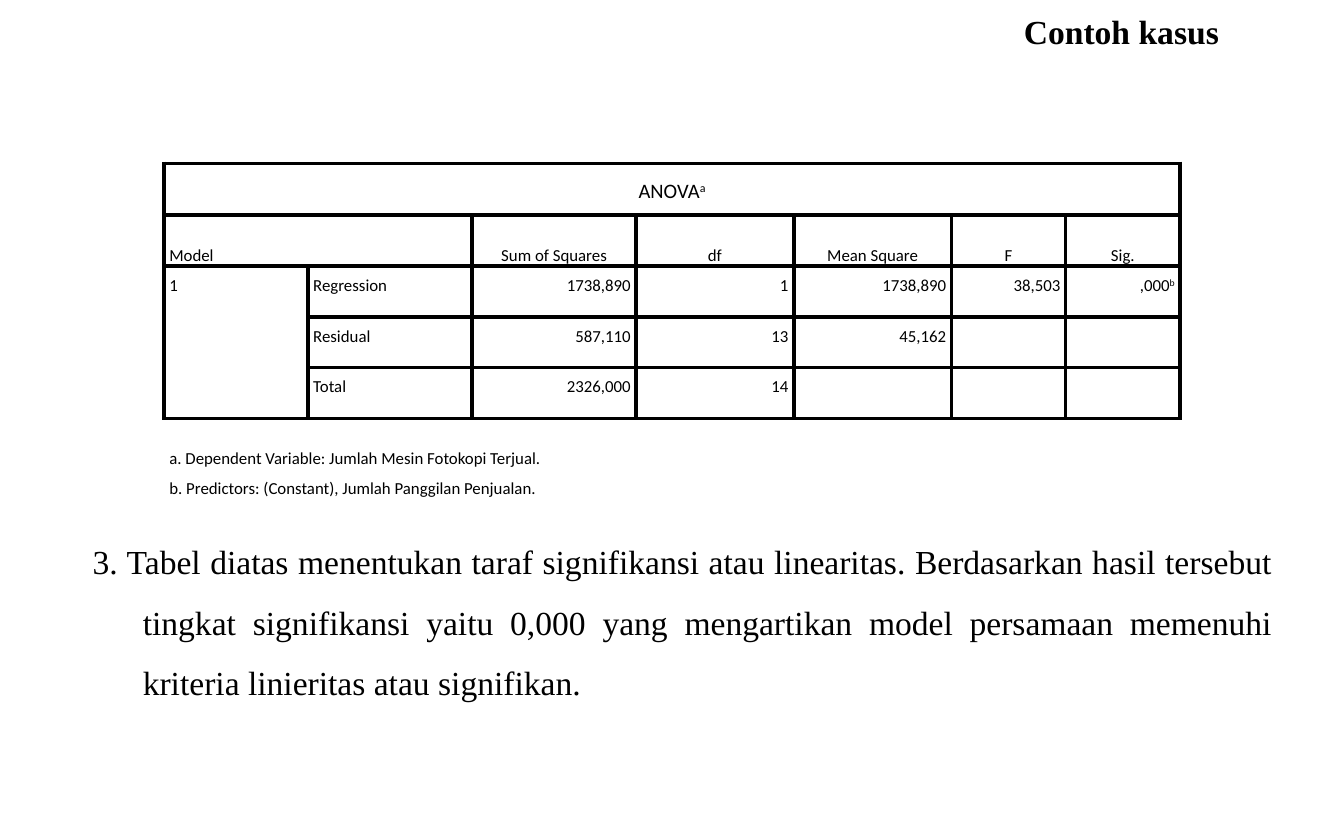
from lxml.etree import SubElement
from pptx import Presentation
from pptx.dml.color import RGBColor
from pptx.enum.text import MSO_ANCHOR, MSO_AUTO_SIZE, PP_ALIGN
from pptx.oxml import parse_xml
from pptx.oxml.ns import nsdecls, qn
from pptx.util import Cm, Pt

INK = "000000"
SERIF = {"name": "Times New Roman", "size": Pt(18)}
SMALL = {"name": "Calibri", "size": Pt(9)}
LARGE = {"name": "Calibri", "size": Pt(11)}
LEFT, MID, RIGHT, FULL = PP_ALIGN.LEFT, PP_ALIGN.CENTER, PP_ALIGN.RIGHT, PP_ALIGN.JUSTIFY
DENSE = {"line_spacing": Pt(16), "space_after": Pt(8)}


def color(code):
    return RGBColor.from_string(code)


def apply(target, form):
    for key, value in form.items():
        setattr(target, key, value)


class Deck:
    def __init__(self, wide, high):
        self.file = Presentation()
        apply(self.file, {"slide_width": Cm(wide), "slide_height": Cm(high)})
        self.slide = self.file.slides.add_slide(self.file.slide_layouts[6])

    def fill_para(self, para, text, font, form, indent):
        apply(para, form)
        for key, value in indent.items():
            para._p.get_or_add_pPr().set(key, str(int(Cm(value))))
        for i, part in enumerate(text.split("|")):
            run = para.add_run()
            run.text = part
            apply(run.font, font)
            run.font.color.rgb = color(INK)
            if i:
                run.font._rPr.set("baseline", "30000")

    def text(self, place, text, font, form, indent):
        frame = self.slide.shapes.add_textbox(*map(Cm, place)).text_frame
        apply(frame, {"word_wrap": True, "auto_size": MSO_AUTO_SIZE.SHAPE_TO_FIT_TEXT})
        self.fill_para(frame.paragraphs[0], text, font, form, indent)

    def border(self, cell, width):
        props = cell._tc.get_or_add_tcPr()
        for side in ("lnL", "lnR", "lnT", "lnB"):
            line = parse_xml(f'<a:{side} {nsdecls("a")} w="{int(Pt(width))}"/>')
            fill = SubElement(line, qn("a:solidFill"))
            SubElement(fill, qn("a:srgbClr")).set("val", INK)
            props.append(line)

    def table(self, left, top, cols, rows, data, style, spans=(), width=0):
        grid = self.slide.shapes.add_table(
            len(rows), len(cols), Cm(left), Cm(top), Cm(sum(cols)), Cm(sum(rows))
        ).table
        apply(grid, {"first_row": False, "horz_banding": False})
        for col, size in zip(grid.columns, cols):
            col.width = Cm(size)
        for row, size in zip(grid.rows, rows):
            row.height = Cm(size)
        for r, line in enumerate(data):
            for c, text in enumerate(line):
                cell = grid.cell(r, c)
                font, align, anchor = style(r, c)
                if width:
                    self.border(cell, width)
                cell.fill.background()
                apply(cell, {"margin_left": 0, "margin_right": 0, "margin_top": 0,
                             "margin_bottom": 0, "vertical_anchor": anchor})
                para = cell.text_frame.paragraphs[0]
                if text:
                    form = {**DENSE, "alignment": align}
                    self.fill_para(para, text, font, form, {"marL": 0.1, "marR": 0.1})
                else:
                    para.font.size = font["size"]
        for first, last in spans:
            grid.cell(*first).merge(grid.cell(*last))


def anova(r, c):
    if r == 0:
        return LARGE, MID, MSO_ANCHOR.MIDDLE
    if r == 1:
        return SMALL, MID if c > 1 else LEFT, MSO_ANCHOR.BOTTOM
    return SMALL, RIGHT if c > 1 else LEFT, MSO_ANCHOR.TOP


def note(r, c):
    return SMALL, LEFT, MSO_ANCHOR.TOP


def main():
    deck = Deck(25.4, 15.88)
    deck.text((19.1, 0.08, 12.7, 1.02), "Contoh kasus",
              {**SERIF, "bold": True}, {"alignment": FULL}, {})
    deck.text((1.5, 9.73, 22.81, 3.61),
              "3. Tabel diatas menentukan taraf signifikansi atau linearitas. "
              "Berdasarkan hasil tersebut tingkat signifikansi yaitu 0,000 yang "
              "mengartikan model persamaan memenuhi kriteria linieritas atau signifikan.",
              SERIF, {"alignment": FULL, "line_spacing": 1.5, "space_after": Pt(8)},
              {"marL": 0.95, "indent": -0.95})
    data = [
        ["ANOVA|a", "", "", "", "", "", ""],
        ["Model", "", "Sum of Squares", "df", "Mean Square", "F", "Sig."],
        ["1", "Regression", "1738,890", "1", "1738,890", "38,503", ",000|b"],
        ["", "Residual", "587,110", "13", "45,162", "", ""],
        ["", "Total", "2326,000", "14", "", "", ""],
    ]
    deck.table(3.1, 3.09, [2.72, 3.1, 3.1, 2.98, 2.98, 2.16, 2.16],
               [0.98] + [0.96] * 4, data, anova,
               [((0, 0), (0, 6)), ((1, 0), (1, 1)), ((2, 0), (4, 0))], 2.25)
    notes = [["a. Dependent Variable: Jumlah Mesin Fotokopi Terjual."],
             ["b. Predictors: (Constant), Jumlah Panggilan Penjualan."]]
    deck.table(3.1, 8.31, [14.1], [0.51] * 2, notes, note)
    deck.file.save("out.pptx")


if __name__ == "__main__":
    main()
